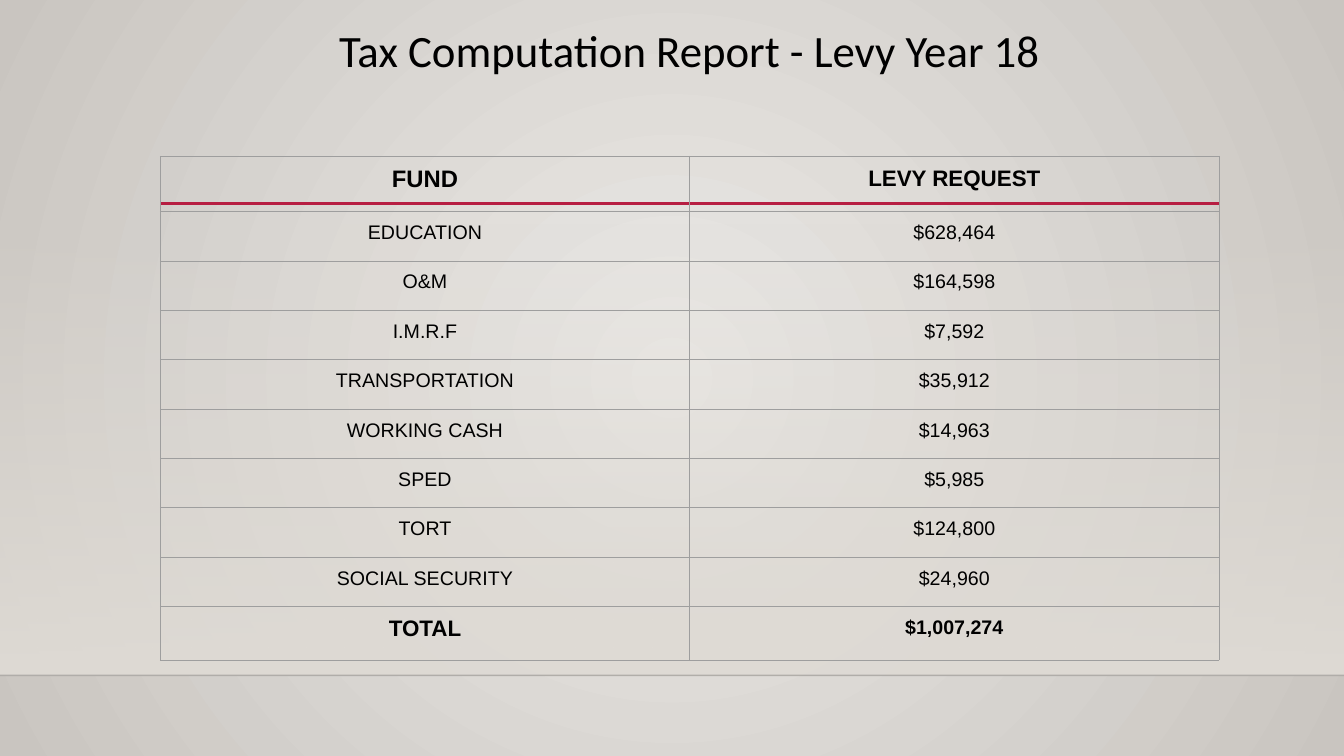
"""Builds the levy year 18 tax computation slide."""
from lxml import etree
from pptx import Presentation
from pptx.dml.color import RGBColor
from pptx.enum.shapes import MSO_CONNECTOR, MSO_SHAPE
from pptx.enum.text import MSO_ANCHOR, PP_ALIGN
from pptx.oxml.ns import qn
from pptx.util import Inches, Pt

TITLE = "Tax Computation Report - Levy Year 18"
HEADER = ("FUND", "LEVY REQUEST")
FUNDS = [
    ("EDUCATION", "$628,464"),
    ("O&M", "$164,598"),
    ("I.M.R.F", "$7,592"),
    ("TRANSPORTATION", "$35,912"),
    ("WORKING CASH", "$14,963"),
    ("SPED", "$5,985"),
    ("TORT", "$124,800"),
    ("SOCIAL SECURITY", "$24,960"),
]
TOTAL = ("TOTAL", "$1,007,274")

WIDTH, HEIGHT = 13.33, 7.5
LEFT, TABLE_TOP, TABLE_WIDTH = 1.59, 1.55, 10.5
HEADER_ROW, FUND_ROW, TOTAL_ROW = 0.55, 0.49, 0.53
HEADER_SIZES, FUND_SIZES, TOTAL_SIZES = (17, 16), (14, 14), (16, 14)
FLOOR, PANEL_HEIGHT, RULE_TOP = 6.7, 4.49, 2.02

BLACK = RGBColor(0, 0, 0)
FLOOR_INK = RGBColor(0, 0, 1)
CRIMSON = RGBColor(0xB7, 0x1E, 0x42)
GRID = RGBColor(0x9E, 0x9E, 0x9E)
LIGHT = RGBColor(0xEB, 0xE9, 0xE6)
DARK = RGBColor(0xC9, 0xC5, 0xC0)
SAND = RGBColor(0xDF, 0xDB, 0xD5)
CENTER, TOP = PP_ALIGN.CENTER, MSO_ANCHOR.TOP
RECT, STRAIGHT = MSO_SHAPE.RECTANGLE, MSO_CONNECTOR.STRAIGHT


def child(parent, tag, **attrs):
    return etree.SubElement(parent, qn(tag), attrs)


def set_gradient(fill, first, last):
    fill.gradient()
    for stop, color, position in zip(fill.gradient_stops, (first, last), (0, 1)):
        stop.color.rgb = color
        stop.position = position


def add_rule(s, left, right, y, color, width):
    line = s.shapes.add_connector(
        STRAIGHT, Inches(left), Inches(y), Inches(right), Inches(y))
    line.line.color.rgb = color
    line.line.width = Pt(width)
    child(line._element.spPr, "a:effectLst")
    return line


def write(p, text, font, size, bold):
    p.alignment = CENTER
    r = p.add_run()
    r.text = text
    r.font.name = font
    r.font.size = Pt(size)
    r.font.bold = bold
    r.font.color.rgb = BLACK


def draw_borders(cell):
    props = cell._tc.get_or_add_tcPr()
    for i, edge in enumerate(("a:lnL", "a:lnR", "a:lnT", "a:lnB")):
        ln = etree.Element(qn(edge), w=str(Pt(0.75)))
        child(child(ln, "a:solidFill"), "a:srgbClr", val=str(GRID))
        props.insert(i, ln)


def add_background(s):
    set_gradient(s.background.fill, LIGHT, DARK)
    grad = s._element.find(".//" + qn("a:gradFill"))
    grad.remove(grad.find(qn("a:lin")))
    circle = child(grad, "a:path", path="circle")
    child(circle, "a:fillToRect", l="50000", t="50000", r="50000", b="50000")

    panel = s.shapes.add_shape(RECT, 0, Inches(FLOOR - PANEL_HEIGHT),
                               Inches(WIDTH), Inches(PANEL_HEIGHT))
    panel.shadow.inherit = False
    panel.line.fill.background()
    set_gradient(panel.fill, SAND, SAND)
    panel.fill.gradient_angle = 270
    child(panel._element.find(".//" + qn("a:srgbClr")), "a:alpha", val="0")

    floor = add_rule(s, 0, WIDTH, FLOOR, FLOOR_INK, 1)
    child(floor._element.find(".//" + qn("a:srgbClr")), "a:alpha", val="20000")
    add_rule(s, LEFT, LEFT + TABLE_WIDTH, RULE_TOP, CRIMSON, 2.5)


def add_title(s):
    title = s.shapes.title
    title.left, title.top = Inches(LEFT), Inches(0.24)
    title.width, title.height = Inches(TABLE_WIDTH), Inches(0.67)
    tf = title.text_frame
    tf.vertical_anchor = TOP
    tf.margin_left = tf.margin_right = Inches(0.1)
    tf.margin_top = tf.margin_bottom = Inches(0.05)
    p = tf.paragraphs[0]
    p.line_spacing = 0.9
    write(p, TITLE, "Calibri", 32, False)


def add_levy_table(s):
    rows = [(HEADER, HEADER_ROW, HEADER_SIZES, True)]
    rows += [(fund, FUND_ROW, FUND_SIZES, False) for fund in FUNDS]
    rows.append((TOTAL, TOTAL_ROW, TOTAL_SIZES, True))
    height = sum(row[1] for row in rows)
    table = s.shapes.add_table(
        len(rows), len(HEADER), Inches(LEFT), Inches(TABLE_TOP),
        Inches(TABLE_WIDTH), Inches(height)).table
    table.first_row = table.horz_banding = False
    for i, (texts, row_height, sizes, bold) in enumerate(rows):
        table.rows[i].height = Inches(row_height)
        for j, (text, size) in enumerate(zip(texts, sizes)):
            cell = table.cell(i, j)
            cell.fill.background()
            cell.vertical_anchor = TOP
            cell.margin_left = cell.margin_right = Inches(0.1)
            cell.margin_top = cell.margin_bottom = Inches(0.1)
            draw_borders(cell)
            write(cell.text_frame.paragraphs[0], text, "Arial", size, bold)


def main():
    prs = Presentation()
    prs.slide_width, prs.slide_height = Inches(WIDTH), Inches(HEIGHT)
    s = prs.slides.add_slide(prs.slide_layouts[5])
    add_background(s)
    add_title(s)
    add_levy_table(s)
    prs.save("out.pptx")


if __name__ == "__main__":
    main()
